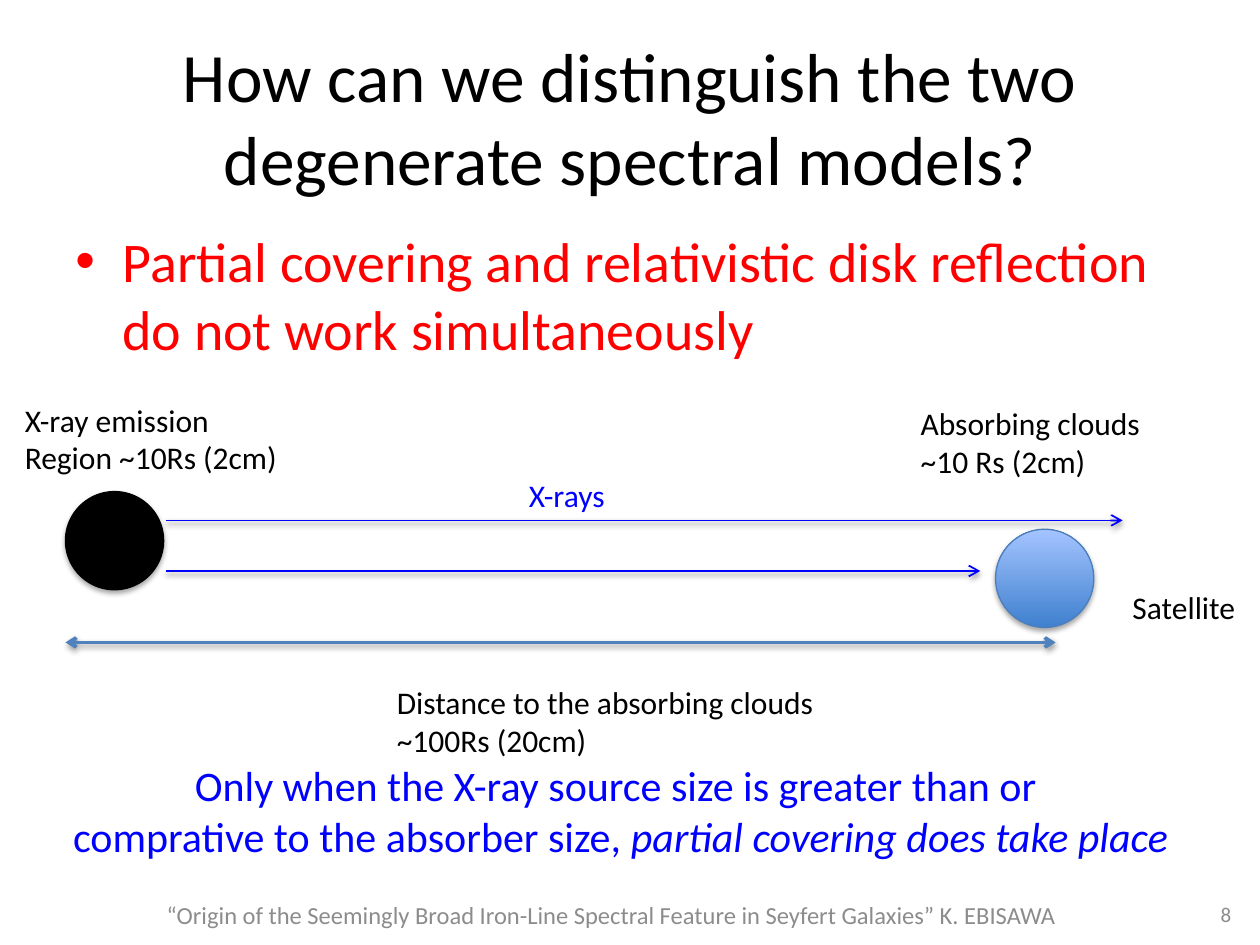
from dataclasses import dataclass

from lxml.etree import SubElement
from pptx import Presentation
from pptx.dml.color import RGBColor as Rgb
from pptx.enum.shapes import MSO_CONNECTOR as Link, MSO_SHAPE as Preset
from pptx.enum.text import MSO_ANCHOR as Anchor, MSO_AUTO_SIZE as Fit, PP_ALIGN as Align
from pptx.oxml.ns import qn
from pptx.util import Cm, Pt


@dataclass(frozen=True)
class Theme:
    """Colours, type sizes and the font of the deck."""
    font: str = "Calibri"
    ink: str = "000000"
    alert: str = "FF0000"
    ray: str = "0000FF"
    muted: str = "8C8C8C"
    span: str = "4F81BD"
    cloud_edge: str = "4B7EBC"
    cloud_fill: tuple = ("3F80CE", "A4C4FF")
    title: float = 39.6
    body: float = 32
    conclusion: float = 24
    label: float = 18
    footer: float = 14
    number: float = 12


@dataclass(frozen=True)
class Box:
    """A rectangle in centimetres."""
    left: float
    top: float
    width: float
    height: float

    def inner(self, left, top, width, height):
        """Return a box placed relative to this one."""
        return Box(self.left + left, self.top + top, width, height)

    def lengths(self):
        """Return left, top, width and height as lengths."""
        return [Cm(value) for value in (self.left, self.top, self.width, self.height)]


THEME = Theme()


def assign(target, values):
    """Set every attribute named in a dict."""
    for name, value in values.items():
        setattr(target, name, value)


def add_text(page, box, lines, size, color, wrap=True, align=Align.LEFT, anchor=Anchor.TOP):
    """Add a text box; each line is a list of (text, italic) spans or a string."""
    frame = page.shapes.add_textbox(*box.lengths()).text_frame
    assign(frame, {
        "word_wrap": wrap,
        "auto_size": Fit.NONE if wrap else Fit.SHAPE_TO_FIT_TEXT,
        "vertical_anchor": anchor,
    })
    for index, line in enumerate(lines):
        para = frame.add_paragraph() if index else frame.paragraphs[0]
        para.alignment = align
        for text, italic in [(line, False)] if isinstance(line, str) else line:
            span = para.add_run()
            span.text = text
            assign(span.font, {"name": THEME.font, "size": Pt(size), "italic": italic})
            span.font.color.rgb = Rgb.from_string(color)
    return frame


def add_shadow(shape, blur, distance, opacity):
    """Give a shape or connector a soft shadow straight below it."""
    properties = shape._element.spPr
    effects = properties.find(qn("a:effectLst"))
    if effects is None:
        effects = SubElement(properties, qn("a:effectLst"))
    shadow = SubElement(effects, qn("a:outerShdw"), {
        "blurRad": str(Pt(blur)), "dist": str(Pt(distance)),
        "dir": "5400000", "rotWithShape": "0",
    })
    tint = SubElement(shadow, qn("a:srgbClr"), val=THEME.ink)
    SubElement(tint, qn("a:alpha"), val=str(opacity * 1000))


def add_ball(page, box, fill, edge):
    """Add a circle with a plain fill or a bottom-to-top gradient."""
    ball = page.shapes.add_shape(Preset.OVAL, *box.lengths())
    if isinstance(fill, str):
        ball.fill.solid()
        ball.fill.fore_color.rgb = Rgb.from_string(fill)
    else:
        ball.fill.gradient()
        ball.fill.gradient_angle = 90
        for stop, color in zip(ball.fill.gradient_stops, fill):
            stop.color.rgb = Rgb.from_string(color)
    ball.line.color.rgb = Rgb.from_string(edge)
    ball.line.width = Pt(0.75)
    ball.shadow.inherit = False
    add_shadow(ball, 3.1, 1.8, 35)


def add_arrow(page, box, color, weight, ends):
    """Add a horizontal arrow along the top of a box."""
    left, top, width, _ = box.lengths()
    arrow = page.shapes.add_connector(Link.STRAIGHT, left, top, left + width, top)
    arrow.line.color.rgb = Rgb.from_string(color)
    arrow.line.width = Pt(weight)
    for end in ends:
        SubElement(arrow.line._get_or_add_ln(), qn(f"a:{end}"), type="arrow")
    add_shadow(arrow, 3.1, 1.6, 38)


def draw_title(page, box):
    """Place the slide title."""
    add_text(page, box, ["How can we distinguish the two degenerate spectral models?"],
             THEME.title, THEME.ink, align=Align.CENTER, anchor=Anchor.MIDDLE)


def draw_claim(page, box):
    """Place the bulleted main claim."""
    text = "Partial covering and relativistic disk reflection do not work simultaneously"
    para = add_text(page, box, [text], THEME.body, THEME.alert).paragraphs[0]
    para.space_before = Pt(6.4)
    properties = para._p.get_or_add_pPr()
    properties.set("marL", str(Cm(0.95)))
    properties.set("indent", str(Cm(-0.95)))
    SubElement(properties, qn("a:buFont"), typeface="Arial")
    SubElement(properties, qn("a:buChar"), char="•")


def draw_geometry(page, box):
    """Draw the source, the cloud, the rays between them and their labels."""
    diameter = 1.98
    source_left, ray_left = 1.07, 3.1
    add_ball(page, box.inner(source_left, 1.96, diameter, diameter), THEME.ink, THEME.ink)
    add_arrow(page, box.inner(source_left, 5, 19.96, 0), THEME.span, 2, ["headEnd", "tailEnd"])
    add_ball(page, box.inner(19.82, 2.72, diameter, diameter),
             THEME.cloud_fill, THEME.cloud_edge)
    for top, length in ((3.56, 16.41), (2.54, 19.28)):
        add_arrow(page, box.inner(ray_left, top, length, 0), THEME.ray, 1, ["tailEnd"])
    labels = (
        (0, 0, 5.66, THEME.ink, ["X-ray emission", "Region ~10Rs (2cm)"]),
        (18.06, 0.08, 4.98, THEME.ink, ["Absorbing clouds", "~10 Rs (2cm)"]),
        (10.16, 1.52, 2.11, THEME.ray, ["X-rays"]),
        (22.33, 3.78, 2.62, THEME.ink, ["Satellite"]),
        (7.5, 5.69, 9.02, THEME.ink, ["Distance to the absorbing clouds", "~100Rs (20cm)"]),
    )
    for left, top, width, color, lines in labels:
        height = 0.24 + 0.78 * len(lines)
        add_text(page, box.inner(left, top, width, height), lines, THEME.label, color, wrap=False)


def draw_conclusion(page, box):
    """Place the concluding statement."""
    lines = [
        "Only when the X-ray source size is greater than or ",
        [("comprative to the absorber size, ", False),
         ("partial covering does take place", True)],
    ]
    add_text(page, box, lines, THEME.conclusion, THEME.ray, wrap=False, align=Align.CENTER)


def draw_footer(page, box):
    """Place the talk reference and the page number."""
    source = "“Origin of the Seemingly Broad Iron-Line Spectral Feature in Seyfert Galaxies” K. EBISAWA"
    add_text(page, box.inner(0, 0.02, 18.92, 1.02), [source], THEME.footer, THEME.muted,
             align=Align.CENTER, anchor=Anchor.MIDDLE)
    add_text(page, box.inner(16.28, 0, 5.92, 1.02), ["8"], THEME.number, THEME.muted,
             align=Align.RIGHT, anchor=Anchor.MIDDLE)


def main():
    """Build the slide and save the deck."""
    deck = Presentation()
    assign(deck, {"slide_width": Cm(25.4), "slide_height": Cm(19.05)})
    page = deck.slides.add_slide(deck.slide_layouts[6])
    draw_title(page, Box(1.27, 0.76, 22.86, 3.18))
    draw_claim(page, Box(1.27, 4.45, 22.86, 3))
    draw_footer(page, Box(2.87, 17.91, 22.2, 1.04))
    draw_conclusion(page, Box(0.89, 15.19, 23.24, 2.31))
    draw_geometry(page, Box(0.25, 7.95, 24.95, 7.49))
    deck.save("out.pptx")


if __name__ == "__main__":
    main()
